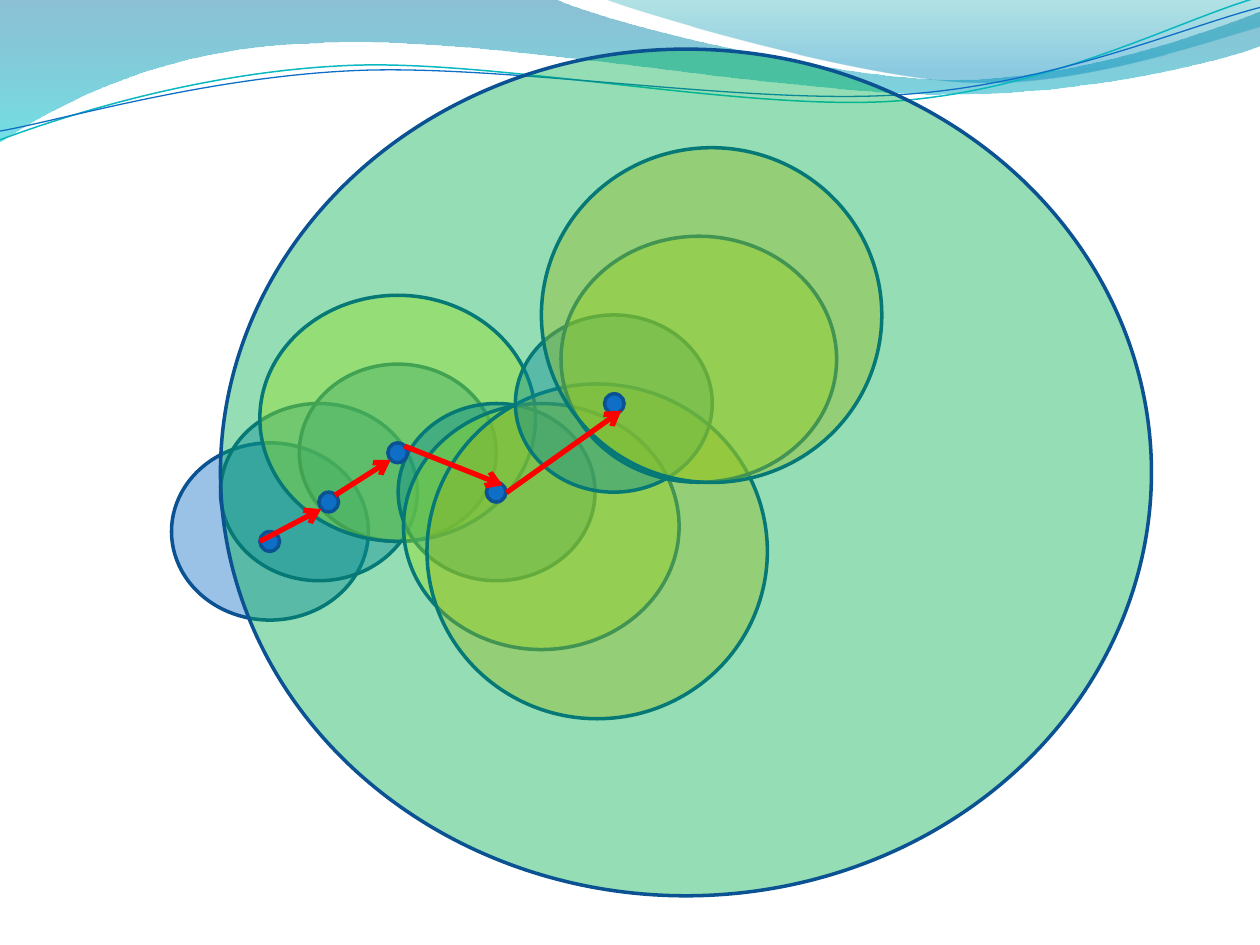
from math import cos, radians, sin

from lxml.etree import SubElement
from pptx import Presentation
from pptx.dml.color import RGBColor as RGB
from pptx.enum.shapes import MSO_CONNECTOR as CONNECTOR, MSO_SHAPE as SHAPE
from pptx.oxml.ns import qn
from pptx.util import Pt

THEME = {
    "blue": "0F6FC6", "navy": "0B5292", "yellow": "FFFF00", "orange": "FFC000",
    "green": "00B050", "red": "FF0000", "teal": "0AB8BF",
}
CIRCLE_OPACITY = 42
TILT = -2.7

# Wave points: 2 numbers are a corner, 6 numbers a cubic curve.
WAVES = [
    {"points": [(0, 0), (316.8, -0.7),
                (342.7, 12.2, 478.1, 45.4, 545.8, 45.4),
                (614.2, 45.4, 689.8, 18.7, 720, 6.5), (720.7, 25.9),
                (707.8, 31.7, 626.4, 54.7, 537.1, 54),
                (447.8, 54, 275, 20.2, 185, 24.5),
                (92.9, 25.9, 33.1, 59.8, -0.7, 81.4), (0, 0)],
     "stops": [(0, "0074A1", 45), (1, "00C6CF", 55)]},
    {"points": [(344.9, -0.7),
                (366.5, 7.9, 491, 44.6, 553.7, 46.8),
                (616.3, 49.7, 691.9, 23, 720, 15.1), (720, 0), (344.9, -0.7)],
     "stops": [(0, "00A1A9", 30), (0.8, "008BBF", 45)]},
    {"points": [(0, 79.9),
                (34.6, 67, 113.8, 41, 199.4, 37.4),
                (284.4, 33.8, 427, 64.1, 513.4, 57.6),
                (599.8, 51.1, 675.4, 10.8, 718.6, -1.4)],
     "line": ("teal", 0.85), "center": (359.3, 41.4)},
    {"points": [(0, 74.9),
                (33.8, 69.1, 118.1, 43.9, 203.8, 40.3),
                (290.2, 36.7, 429.8, 60.5, 516.2, 54),
                (601.9, 48.2, 677.5, 15.1, 720, 4.3)],
     "line": ("blue", 0.75), "center": (359.6, 42.5)},
]

# Kind of ellipse: width, height, fill, opacity
ELLIPSES = {
    "small": (112.5, 101.25, "blue", CIRCLE_OPACITY),
    "medium": (157.5, 140.6, "yellow", CIRCLE_OPACITY),
    "large": (194.5, 191.3, "orange", CIRCLE_OPACITY),
    "outer": (532, 483.8, "green", CIRCLE_OPACITY),
    "dot": (11.25, 11.25, "blue", 100),
}
PLACED = [
    ("small", 98, 253.1), ("small", 126, 230.6), ("small", 171, 208.1),
    ("medium", 148.5, 168.75), ("small", 227.5, 230.6), ("medium", 230.6, 230.6),
    ("large", 244, 219.4), ("small", 294.5, 180), ("medium", 320.6, 135),
    ("large", 309.4, 84.4), ("outer", 126, 28.1),
    ("dot", 148.5, 303.75), ("dot", 182.2, 281.25), ("dot", 221.6, 253.1),
    ("dot", 277.9, 275.6), ("dot", 345.4, 225),
]
ARROWS = [
    (148.5, 309.4, 183.6, 290.9), (191.5, 283, 223.2, 262.8),
    (231.1, 254.9, 287.3, 277.2), (289.4, 281.5, 355, 234.7),
]


def add_wave(points, closed, center=None):
    """Add an outline of corners and cubic curves, tilted if it has a center."""
    vertices = [point[i:i + 2] for point in points for i in range(0, len(point), 2)]
    if center:
        (cx, cy), turn = center, radians(-TILT)
        vertices = [(cx + (x - cx) * cos(turn) - (y - cy) * sin(turn),
                     cy + (x - cx) * sin(turn) + (y - cy) * cos(turn))
                    for x, y in vertices]
    vertices = [(Pt(x), Pt(y)) for x, y in vertices]
    builder = slide.shapes.build_freeform(*vertices[0])
    builder.add_line_segments(vertices[1:], close=closed)
    shape = builder.convert_to_shape()
    segments = iter(list(shape.element.iter(qn("a:lnTo"))))
    for point in points[1:]:
        segment = next(segments)
        if len(point) == 6:
            segment.tag = qn("a:cubicBezTo")
            for extra in (next(segments), next(segments)):
                segment.append(extra[0])
                extra.getparent().remove(extra)
    if center:
        shape.rotation = TILT
    shape.shadow.inherit = False
    return shape


def set_opacity(parent, percent):
    """Give the RGB colours below an XML element an opacity."""
    for color in parent.iter(qn("a:srgbClr")):
        SubElement(color, qn("a:alpha"), val=str(percent * 1000))


presentation = Presentation()
presentation.slide_width, presentation.slide_height = Pt(720), Pt(540)
slide = presentation.slides.add_slide(presentation.slide_layouts[6])
shapes = slide.shapes

for wave in WAVES:
    filled = "stops" in wave
    shape = add_wave(wave["points"], filled, wave.get("center"))
    if filled:
        shape.line.fill.background()
        shape.fill.gradient()
        shape.fill.gradient_angle = 270
        for stop, (position, color, percent) in zip(shape.fill.gradient_stops, wave["stops"]):
            stop.position = position
            stop.color.rgb = RGB.from_string(color)
            set_opacity(stop.color._xFill, percent)
    else:
        color, width = wave["line"]
        shape.fill.background()
        shape.line.color.rgb = RGB.from_string(THEME[color])
        shape.line.width = Pt(width)

for kind, left, top in PLACED:
    width, height, color, percent = ELLIPSES[kind]
    shape = shapes.add_shape(SHAPE.OVAL, Pt(left), Pt(top), Pt(width), Pt(height))
    shape.shadow.inherit = False
    shape.fill.solid()
    shape.fill.fore_color.rgb = RGB.from_string(THEME[color])
    if percent < 100:
        set_opacity(shape.element.spPr, percent)
    shape.line.color.rgb = RGB.from_string(THEME["navy"])
    shape.line.width = Pt(2)

for ends in ARROWS:
    arrow = shapes.add_connector(CONNECTOR.STRAIGHT, *map(Pt, ends))
    arrow.line.color.rgb = RGB.from_string(THEME["red"])
    arrow.line.width = Pt(3)
    properties = arrow._element.spPr
    SubElement(properties.find(qn("a:ln")), qn("a:tailEnd"), type="arrow")
    SubElement(properties, qn("a:effectLst"))

presentation.save("out.pptx")
